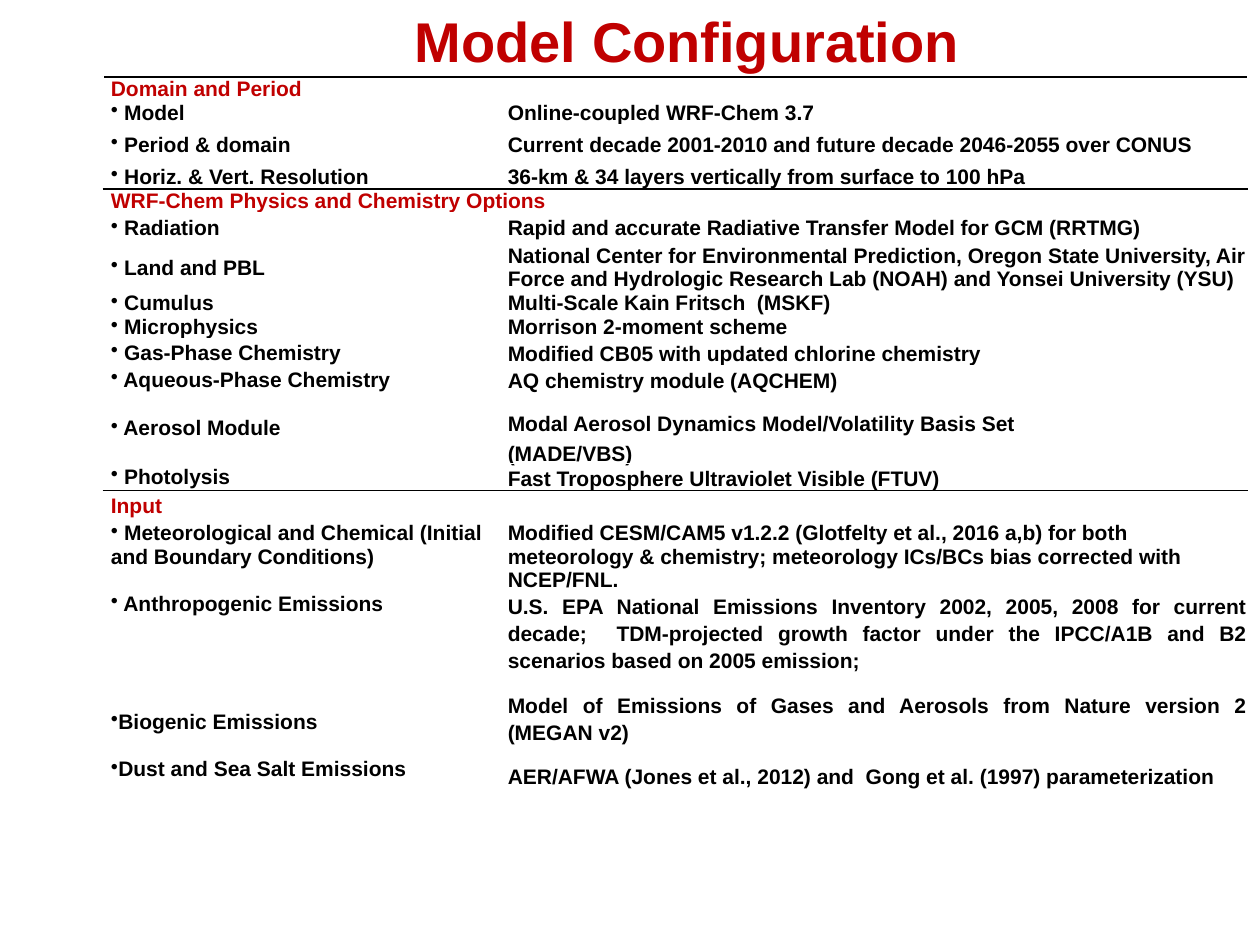
from lxml.etree import SubElement
from pptx import Presentation
from pptx.dml.color import RGBColor
from pptx.enum.text import MSO_ANCHOR, PP_ALIGN
from pptx.oxml import parse_xml
from pptx.oxml.ns import nsdecls, qn
from pptx.util import Inches, Pt

RED, BLACK = "C00000", "000000"
JUSTIFIED = {"alignment": PP_ALIGN.JUSTIFY, "line_spacing": 1.15, "space_after": Pt(10)}
TIGHT = {**JUSTIFIED, "line_spacing": 0.5}
MIDDLE = {"margin_left": Inches(0.06), "margin_right": 0, "margin_top": 0,
          "margin_bottom": 0, "vertical_anchor": MSO_ANCHOR.MIDDLE}
TOP = {**MIDDLE, "vertical_anchor": MSO_ANCHOR.TOP}
PADDED = {**MIDDLE, "margin_top": Inches(0.03), "margin_bottom": Inches(0.03)}
LOWERED = {**MIDDLE, "margin_top": Inches(0.23)}

SECTIONS = [
    ("Domain and Period", 0.19, MIDDLE, [
        (0.19, [" Model"], ["Online-coupled WRF-Chem 3.7"], {}, MIDDLE),
        (0.32, [" Period & domain"],
         ["Current decade 2001-2010 and future decade 2046-2055 over CONUS"], {}, MIDDLE),
        (0.19, [" Horiz. & Vert. Resolution"],
         ["36-km & 34 layers vertically from surface to 100 hPa"], {}, MIDDLE),
    ]),
    ("WRF-Chem Physics and Chemistry Options", 0.19, MIDDLE, [
        (0.25, [" Radiation"],
         ["Rapid and accurate Radiative Transfer Model for GCM (RRTMG)"], {}, MIDDLE),
        (0.37, [" Land and PBL"],
         ["National Center for Environmental Prediction, Oregon State University, Air Force "
          "and Hydrologic Research Lab (NOAH) and Yonsei University (YSU)"], {}, MIDDLE),
        (0.19, [" Cumulus"], ["Multi-Scale Kain Fritsch  (MSKF)"], {}, MIDDLE),
        (0.19, [" Microphysics"], ["Morrison 2-moment scheme"], {}, MIDDLE),
        (0.2, [" Gas-Phase Chemistry"],
         ["Modified CB05 with updated chlorine chemistry"], JUSTIFIED, MIDDLE),
        (0.2, [" Aqueous-Phase Chemistry"],
         ["AQ chemistry module (AQCHEM)"], {**JUSTIFIED, "space_after": Pt(0)}, MIDDLE),
        (0.55, [" Aerosol Module"],
         ["Modal Aerosol Dynamics Model/Volatility Basis Set", "(MADE/VBS)"], TIGHT, LOWERED),
        (0.2, [" Photolysis"],
         ["Fast Troposphere Ultraviolet Visible (FTUV)"], JUSTIFIED, MIDDLE),
    ]),
    ("Input", 0.24, PADDED, [
        (0.56, [" Meteorological and Chemical (Initial and Boundary Conditions)"],
         ["Modified CESM/CAM5 v1.2.2 (Glotfelty et al., 2016 a,b) for both meteorology & "
          "chemistry; meteorology ICs/BCs bias corrected with NCEP/FNL."], {}, TOP),
        (1.75, [" Anthropogenic Emissions", "Biogenic Emissions", "Dust and Sea Salt Emissions"],
         ["U.S. EPA National Emissions Inventory 2002, 2005, 2008 for current decade;  "
          "TDM-projected growth factor under the IPCC/A1B and B2 scenarios based on 2005 emission;",
          "Model of Emissions of Gases and Aerosols from Nature version 2 (MEGAN v2)",
          "AER/AFWA (Jones et al., 2012) and  Gong et al. (1997) parameterization"],
         JUSTIFIED, TOP),
    ]),
]
EMISSION_GAPS = [0, 54, 13.5]


def rgb(value):
    """Turn a hex string into a colour."""
    return RGBColor.from_string(value)


def apply(target, formats):
    """Set every format value on the target."""
    for name, value in formats.items():
        setattr(target, name, value)


def write(tf, lines, color=BLACK, size=12, formats=None, bullet=False):
    """Fill a text frame with one bold paragraph per line."""
    for i, line in enumerate(lines):
        p = tf.paragraphs[0] if i == 0 else tf.add_paragraph()
        if bullet:
            pPr = p._p.get_or_add_pPr()
            apply_indent = {"marL": "0", "indent": "0"}
            for name, value in apply_indent.items():
                pPr.set(name, value)
            SubElement(pPr, qn("a:buChar")).set("char", "•")
            if i:
                p.space_before = Pt(EMISSION_GAPS[i])
        apply(p, formats or {})
        r = p.add_run()
        r.text = line
        apply(r.font, {"name": "Arial", "size": Pt(size), "bold": True})
        r.font.color.rgb = rgb(color)


def add_border(cell, side):
    """Draw a black line on the top (T) or bottom (B) of a cell."""
    ln = parse_xml(
        f'<a:ln{side} {nsdecls("a")} w="{Pt(1)}"><a:solidFill>'
        f'<a:srgbClr val="{BLACK}"/></a:solidFill></a:ln{side}>')
    cell._tc.get_or_add_tcPr().insert(0, ln)


def add_title(s, text):
    """Add the centred slide title."""
    sp = s.shapes.add_textbox(Inches(1.12), Inches(0), Inches(8.67), Inches(0.75))
    sp.text_frame.word_wrap = True
    write(sp.text_frame, [text], RED, 32, {"alignment": PP_ALIGN.CENTER})


def add_heading(table, row, text, frame):
    """Write a section heading across both columns."""
    left, right = table.cell(row, 0), table.cell(row, 1)
    left.merge(right)
    apply(left, frame)
    write(left.text_frame, [text], RED)
    for cell in (left, right):
        add_border(cell, "T")


def add_option(table, row, labels, values, formats, frame):
    """Write a bulleted label and its description."""
    left, right = table.cell(row, 0), table.cell(row, 1)
    apply(left, TOP if frame is TOP else MIDDLE)
    apply(right, frame)
    write(left.text_frame, labels, bullet=True)
    write(right.text_frame, values, formats=formats)


def add_configuration(s):
    """Build the configuration table section by section."""
    count = sum(1 + len(options) for *_, options in SECTIONS)
    table = s.shapes.add_table(
        count, 2, Inches(0.82), Inches(0.61), Inches(9.08), Inches(5.78)).table
    apply(table, {"first_row": False, "horz_banding": False})
    for column, width in zip(table.columns, (3.15, 5.93)):
        column.width = Inches(width)
    for cell in table.iter_cells():
        cell.fill.background()
    row = 0
    for title, height, frame, options in SECTIONS:
        if row:
            for column in range(2):
                add_border(table.cell(row - 1, column), "B")
        table.rows[row].height = Inches(height)
        add_heading(table, row, title, frame)
        for height, *content in options:
            row += 1
            table.rows[row].height = Inches(height)
            add_option(table, row, *content)
        row += 1


def main():
    """Build and save the slide."""
    prs = Presentation()
    apply(prs, {"slide_width": Inches(10), "slide_height": Inches(7.5)})
    s = prs.slides.add_slide(prs.slide_layouts[6])
    add_configuration(s)
    add_title(s, "Model Configuration")
    prs.save("out.pptx")


if __name__ == "__main__":
    main()
